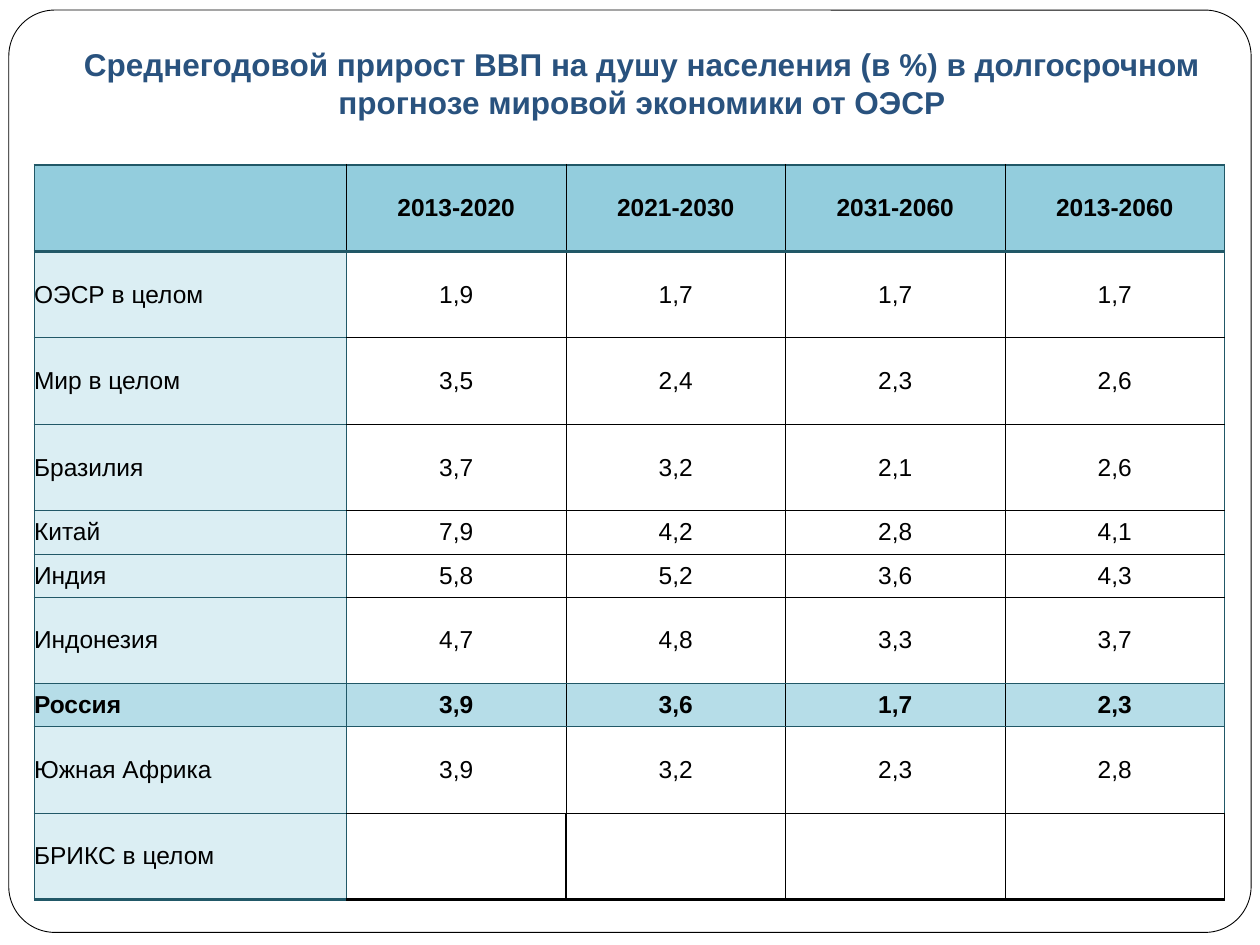
from lxml import etree
from pptx import Presentation
from pptx import util as u
from pptx.dml.color import RGBColor
from pptx.enum import shapes, text
from pptx.oxml import ns

THEME = {
    "font": "Arial", "title_size": 18, "cell_size": 14,
    "title": "29527E", "ink": "000000", "paper": "FFFFFF", "teal": "215867",
    "header": "93CDDD", "label": "DBEEF3", "accent": "B6DDE8",
}
THIN, MEDIUM, THICK = 0.5, 1, 1.5


def style_text(p, size, color, bold, align):
    p.alignment = align
    for r in p.runs:
        r.font.name = THEME["font"]
        r.font.size = u.Pt(size)
        r.font.bold = bold
        r.font.color.rgb = RGBColor.from_string(THEME[color])


def set_borders(cell, borders):
    tcPr = cell._tc.get_or_add_tcPr()
    for i, (side, (color, width)) in enumerate(borders.items()):
        ln = etree.Element(ns.qn(f"a:ln{side}"), w=str(u.Pt(width)))
        fill = etree.SubElement(ln, ns.qn("a:solidFill"))
        etree.SubElement(fill, ns.qn("a:srgbClr"), val=THEME[color])
        tcPr.insert(i, ln)


prs = Presentation()
prs.slide_width, prs.slide_height = u.Inches(10), u.Inches(7.5)
s = prs.slides.add_slide(prs.slide_layouts[5])

frame = s.shapes.add_shape(
    shapes.MSO_SHAPE.ROUNDED_RECTANGLE,
    u.Inches(0.07), u.Inches(0.08), u.Inches(9.86), u.Inches(7.32))
frame.adjustments[0] = 0.05
frame.shadow.inherit = False
frame.fill.solid()
frame.fill.fore_color.rgb = RGBColor.from_string(THEME["paper"])
frame.line.color.rgb = RGBColor.from_string(THEME["ink"])
frame.line.width = u.Pt(THIN)

rows = [
    ["", "2013-2020", "2021-2030", "2031-2060", "2013-2060"],
    ["ОЭСР в целом", "1,9", "1,7", "1,7", "1,7"],
    ["Мир в целом", "3,5", "2,4", "2,3", "2,6"],
    ["Бразилия", "3,7", "3,2", "2,1", "2,6"],
    ["Китай", "7,9", "4,2", "2,8", "4,1"],
    ["Индия", "5,8", "5,2", "3,6", "4,3"],
    ["Индонезия", "4,7", "4,8", "3,3", "3,7"],
    ["Россия", "3,9", "3,6", "1,7", "2,3"],
    ["Южная Африка", "3,9", "3,2", "2,3", "2,8"],
    ["БРИКС в целом", "", "", "", ""],
]
short_rows = ("Китай", "Индия", "Россия")
row_units = [1 if row[0] in short_rows else 2 for row in rows]
accent_row = 7
last_row, last_col = len(rows) - 1, len(rows[0]) - 1
width, height, label_width = 9.45, 5.83, 2.48

tbl = s.shapes.add_table(
    len(rows), len(rows[0]), u.Inches(0.27), u.Inches(1.31),
    u.Inches(width), u.Inches(height)).table
tbl.first_row = tbl.horz_banding = False
for c, col in enumerate(tbl.columns):
    col.width = u.Inches((width - label_width) / last_col if c else label_width)
for units, row in zip(row_units, tbl.rows):
    row.height = u.Inches(height * units / sum(row_units))

for y, row in enumerate(rows):
    for x, value in enumerate(row):
        cell = tbl.cell(y, x)
        cell.margin_left = cell.margin_right = 0
        cell.margin_top = cell.margin_bottom = 0
        cell.vertical_anchor = text.MSO_ANCHOR.MIDDLE
        cell.text_frame.text = value
        align = text.PP_ALIGN.CENTER if x else text.PP_ALIGN.LEFT
        style_text(cell.text_frame.paragraphs[0], THEME["cell_size"], "ink",
                   y in (0, accent_row), align)

        fill = ("header" if y == 0 else "accent" if y == accent_row
                else "label" if x == 0 else None)
        if fill:
            cell.fill.solid()
            cell.fill.fore_color.rgb = RGBColor.from_string(THEME[fill])
        else:
            cell.fill.background()

        borders = {}
        for side, edge in (("L", x), ("R", x + 1)):
            teal = edge in (0, last_col + 1) or (edge == 1 and y > 0)
            borders[side] = ("teal" if teal else "ink", THIN)
            if y == last_row and edge in (2, last_col + 1):
                borders[side] = ("ink", MEDIUM)
        for side, edge in (("T", y), ("B", y + 1)):
            teal = x == 0 or edge in (0, 1, accent_row, accent_row + 1)
            weight = THICK if edge in (0, 1, last_row + 1) else THIN
            borders[side] = ("teal" if teal else "ink", weight)
        set_borders(cell, borders)

title = s.shapes.title
title.left, title.top = u.Inches(0.35), u.Inches(0.36)
title.width, title.height = u.Inches(9.49), u.Inches(0.91)
tf = title.text_frame
tf.text = ("Среднегодовой прирост ВВП на душу населения (в %) "
           "в долгосрочном прогнозе мировой экономики от ОЭСР")
tf.word_wrap = True
tf.auto_size = text.MSO_AUTO_SIZE.NONE
tf.vertical_anchor = text.MSO_ANCHOR.TOP
tf.margin_left = tf.margin_right = tf.margin_top = tf.margin_bottom = 0
style_text(tf.paragraphs[0], THEME["title_size"], "title", True,
           text.PP_ALIGN.CENTER)
s.shapes._spTree.append(title._element)

prs.save("out.pptx")
